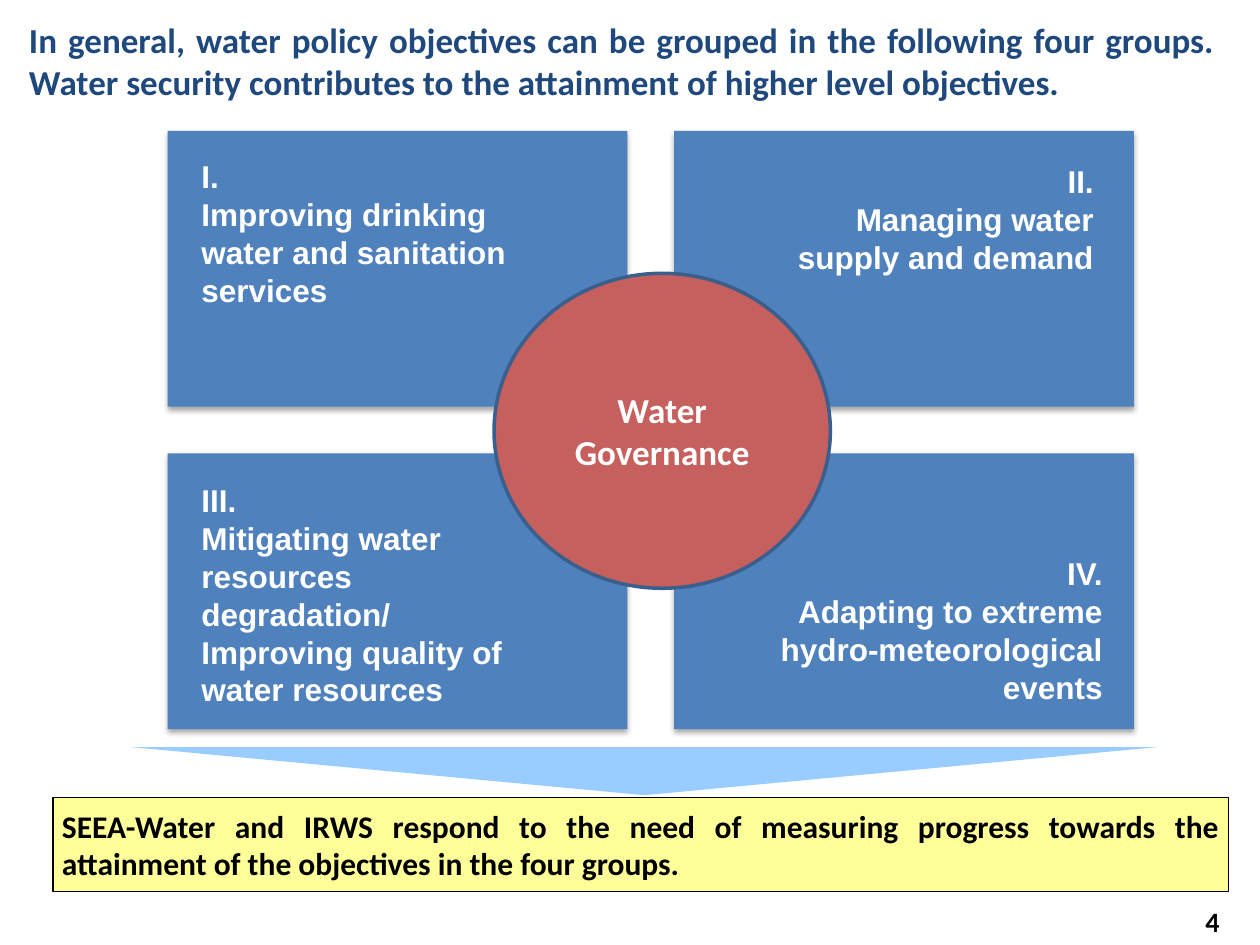
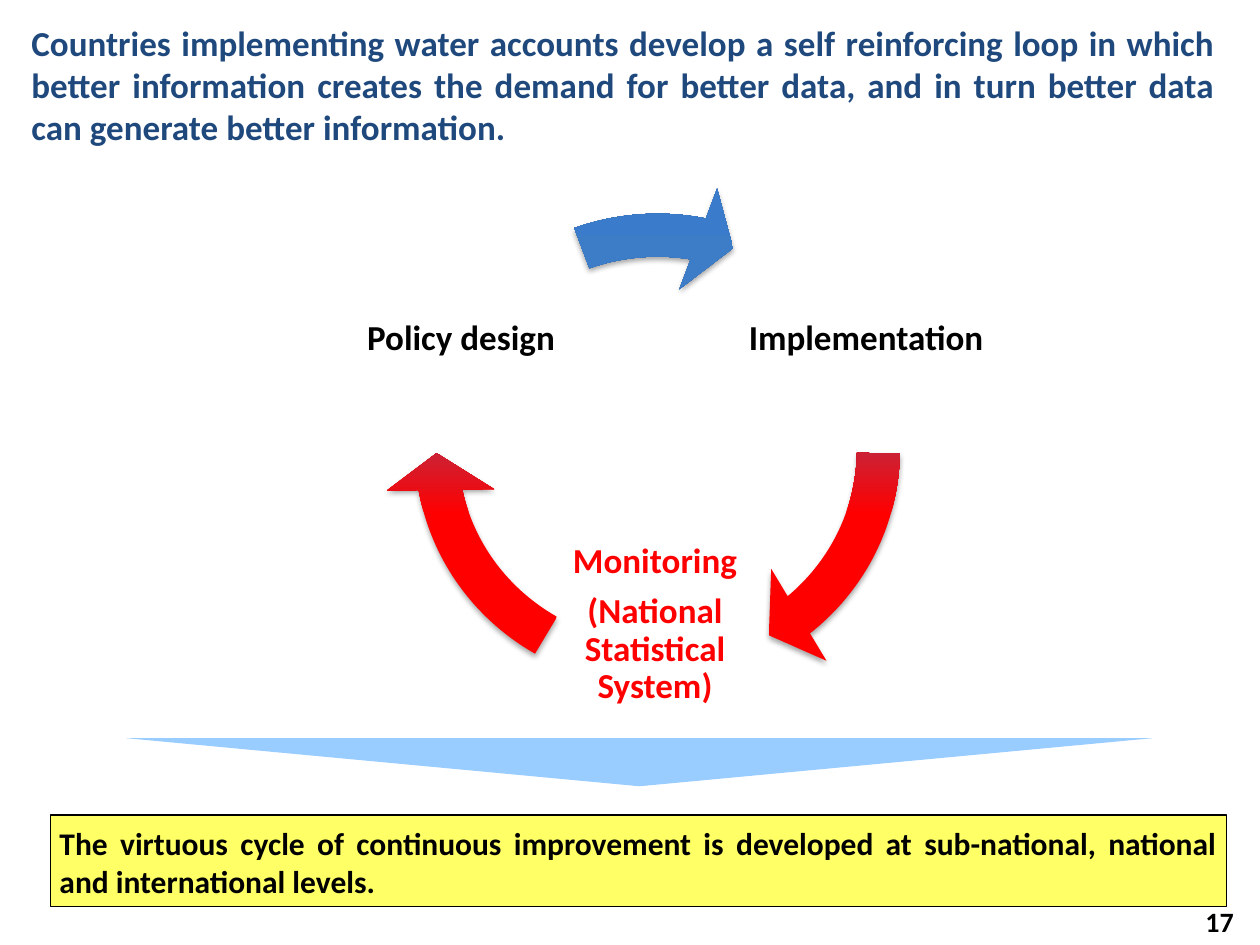
"""Build two slides on water policy objectives and the water accounts loop."""
from lxml import etree
from pptx import Presentation
from pptx.dml import color
from pptx.enum import shapes, text
from pptx.oxml import ns
from pptx.util import Cm, Pt

NAVY = color.RGBColor(0x1F, 0x49, 0x7D)
BLUE = color.RGBColor(0x4F, 0x81, 0xBD)
EDGE = color.RGBColor(0x3A, 0x5F, 0x8C)
SKY = color.RGBColor(0x99, 0xCC, 0xFF)
ROSE = color.RGBColor(0xC6, 0x60, 0x5E)
RED = color.RGBColor(0xFF, 0x00, 0x00)
DEEP = color.RGBColor(0x2F, 0x5F, 0x99)
MID = color.RGBColor(0x3D, 0x7C, 0xC7)
LIGHT = color.RGBColor(0x3A, 0x7C, 0xCB)
PALE = color.RGBColor(0xFF, 0xFF, 0x99)
LEMON = color.RGBColor(0xFF, 0xFF, 0x66)
BLACK = color.RGBColor(0, 0, 0)
WHITE = color.RGBColor(0xFF, 0xFF, 0xFF)

KIND = shapes.MSO_SHAPE
TOP, MIDDLE = text.MSO_ANCHOR.TOP, text.MSO_ANCHOR.MIDDLE
LEFT, RIGHT = text.PP_ALIGN.LEFT, text.PP_ALIGN.RIGHT
CENTER, JUST = text.PP_ALIGN.CENTER, text.PP_ALIGN.JUSTIFY


def write(shape, lines, size, ink, align=LEFT, anchor=TOP, font="Calibri"):
    """Fill a shape with bold paragraphs and return its text frame."""
    frame = shape.text_frame
    frame.word_wrap = True
    frame.auto_size = text.MSO_AUTO_SIZE.NONE
    frame.vertical_anchor = anchor
    for i, line in enumerate(lines):
        para = frame.paragraphs[0] if i == 0 else frame.add_paragraph()
        para.alignment = align
        run = para.add_run()
        run.text = line
        run.font.name, run.font.size = font, Pt(size)
        run.font.bold, run.font.color.rgb = True, ink
    return frame


def draw(slide, kind, box, fill=None, line=None, width=0.75, shade=False):
    """Add a preset shape with its fill, outline and optional soft shadow."""
    shape = slide.shapes.add_shape(kind, *map(Cm, box))
    shape.shadow.inherit = False
    if fill is not None:
        shape.fill.solid()
        shape.fill.fore_color.rgb = fill
    if line is None:
        shape.line.fill.background()
    else:
        shape.line.color.rgb = line
        shape.line.width = Pt(width)
    if shade:
        glow = shape.element.spPr.find(ns.qn("a:effectLst"))
        soft = etree.SubElement(glow, ns.qn("a:outerShdw"), blurRad="40000",
                                dist="23000", dir="5400000", rotWithShape="0")
        tone = etree.SubElement(soft, ns.qn("a:srgbClr"), val="000000")
        etree.SubElement(tone, ns.qn("a:alpha"), val="35000")
    return shape


deck = Presentation()
deck.slide_width, deck.slide_height = Cm(25.4), Cm(19.05)

pages = [
    ("4", "In general, water policy objectives can be grouped in the following "
     "four groups. Water security contributes to the attainment of higher "
     "level objectives.", (0.33, 0.25, 24.41, 1.98), (2.64, 15.06),
     "SEEA-Water and IRWS respond to the need of measuring progress towards "
     "the attainment of the objectives in the four groups.",
     (1.07, 16.08, 23.7, 1.9), PALE),
    ("17", "Countries implementing water accounts develop a self reinforcing "
     "loop in which better information creates the demand for better data, "
     "and in turn better data can generate better information.",
     (0.38, 0.3, 24.36, 2.87), (2.54, 14.88),
     "The virtuous cycle of continuous improvement is developed at "
     "sub-national, national and international levels.",
     (1.02, 16.43, 23.7, 1.85), LEMON),
]
for num, head, spot, tip, note, box, fill in pages:
    slide = deck.slides.add_slide(deck.slide_layouts[5])
    title = slide.shapes.title
    title.left, title.top, title.width, title.height = map(Cm, spot)
    write(title, [head], 20, NAVY, JUST)
    draw(slide, KIND.ISOSCELES_TRIANGLE, (*tip, 20.7, 0.97), SKY).rotation = 180
    band = draw(slide, KIND.RECTANGLE, box, fill, BLACK)
    frame = write(band, [note], 18, BLACK, JUST)
    frame.margin_left = frame.margin_right = frame.margin_top = Cm(0.18)
    frame.margin_bottom = 0
    mark = slide.shapes.add_textbox(Cm(24.05), Cm(18.26), Cm(1.24), Cm(0.61))
    write(mark, [num], 16, BLACK, anchor=MIDDLE)

goals, cycle = deck.slides

for row in range(2):
    for col in range(2):
        box = (3.38 + 10.21 * col, 2.64 + 6.5 * row, 9.27, 5.56)
        draw(goals, KIND.RECTANGLE, box, BLUE, shade=True)
hub = draw(goals, KIND.OVAL, (9.96, 5.51, 6.78, 6.35), ROSE, EDGE, 2)
write(hub, ["Water Governance"], 20, WHITE, CENTER, MIDDLE)

groups = [
    ("I.", "Improving drinking water and sanitation services",
     (3.81, 3.05, 6.99, 3.33), LEFT),
    ("II.", "Managing water supply and demand",
     (15.52, 3.15, 6.78, 2.54), RIGHT),
    ("III.", "Mitigating water resources degradation/ Improving quality of "
     "water resources", (3.81, 9.58, 6.99, 4.88), LEFT),
    ("IV.", "Adapting to extreme hydro-meteorological events",
     (14.17, 11.05, 8.31, 3.33), RIGHT),
]
for num, goal, box, align in groups:
    label = goals.shapes.add_textbox(*map(Cm, box))
    write(label, [num, goal], 18, WHITE, align, font="Arial")

warm = [(38, RED), (80, MID), (100, LIGHT)]
cool = [(0, DEEP), (80, MID), (100, LIGHT)]
steps = [
    (["Implementation"], (14.83, 4.55, 5.26, 4.57), BLACK, 29.64, 0.51, warm),
    (["Monitoring", "(National Statistical System)"],
     (10.87, 10.31, 4.67, 4.57), RED, 101.73, 72.6, warm),
    (["Policy design"], (6.96, 4.55, 4.67, 4.57), BLACK, 168.57, 149.67, cool),
]
for lines, box, ink, end, start, stops in steps:
    label = cycle.shapes.add_textbox(*map(Cm, box))
    frame = write(label, lines, 20, ink, CENTER, MIDDLE)
    frame.margin_left = frame.margin_right = Cm(0.08)
    frame.margin_top = frame.margin_bottom = Cm(0.08)
    for para in frame.paragraphs:
        para.line_spacing, para.space_after = 0.9, Pt(7)

    arrow = draw(cycle, KIND.CIRCULAR_ARROW, (7.72, 3.66, 11.07, 10.82),
                 shade=True)
    for i, value in enumerate((0.08, 5.76, end, start, 0.1)):
        arrow.adjustments[i] = value
    arrow.fill.gradient()
    arrow.fill.gradient_angle = 90
    ramp = arrow.element.spPr.find(".//" + ns.qn("a:gsLst"))
    for old in list(ramp):
        ramp.remove(old)
    for place, tone in stops:
        stop = etree.SubElement(ramp, ns.qn("a:gs"), pos=str(place * 1000))
        etree.SubElement(stop, ns.qn("a:srgbClr"), val=str(tone))

deck.save("out.pptx")
